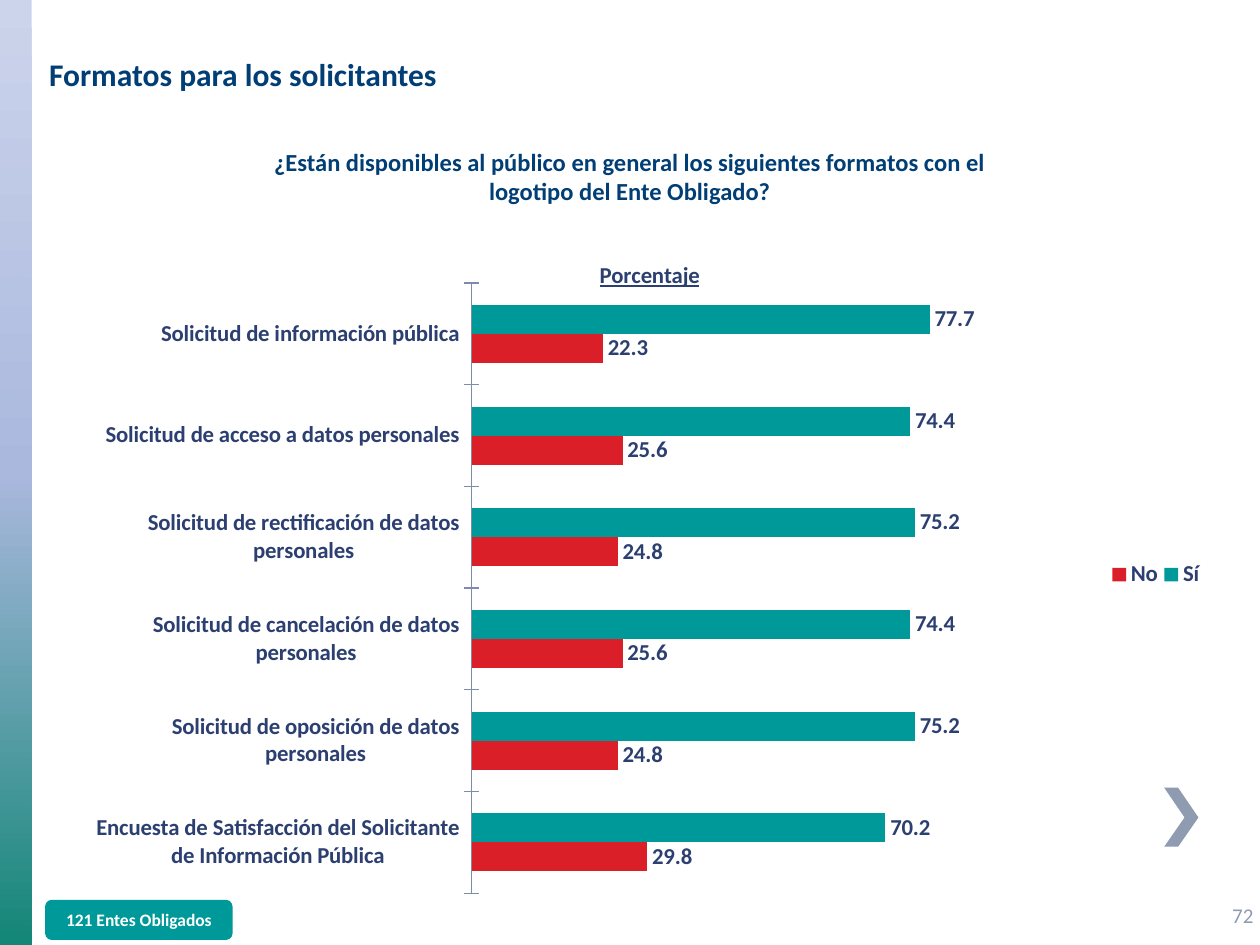
from copy import deepcopy
from lxml import etree
from pptx import Presentation
from pptx.chart.data import CategoryChartData
from pptx.dml.color import RGBColor
from pptx.enum.chart import XL_CHART_TYPE as ChartType, XL_LABEL_POSITION as LabelPosition
from pptx.enum.chart import XL_LEGEND_POSITION as LegendPosition, XL_TICK_MARK as TickMark
from pptx.enum.shapes import MSO_SHAPE as Shape
from pptx.enum.text import MSO_ANCHOR as Anchor, PP_ALIGN as Align
from pptx.oxml.ns import qn
from pptx.util import Cm, Pt


def color(hex_text):
    return RGBColor.from_string(hex_text)


def place(parent, index, settings):
    for old in parent.findall(qn("c:layout")):
        parent.remove(old)
    layout = etree.Element(qn("c:layout"))
    manual = etree.SubElement(layout, qn("c:manualLayout"))
    for tag, value in settings.items():
        etree.SubElement(manual, qn(f"c:{tag}")).set("val", str(value))
    parent.insert(index, layout)


deck = Presentation()
deck.slide_width, deck.slide_height = Cm(25.4), Cm(19.05)
page = deck.slides.add_slide(deck.slide_layouts[6])

strip = page.shapes.add_shape(Shape.RECTANGLE, 0, 0, Cm(0.64), Cm(19.05))
strip.shadow.inherit = False
strip.line.fill.background()
strip.fill.gradient()
strip.fill.gradient_angle = 270
stop_list = strip.fill._fill._gradFill.find(qn("a:gsLst"))
stop_list.append(deepcopy(stop_list[-1]))
for stop, position, shade in zip(strip.fill.gradient_stops, (0, 0.5, 1), ("CCD4EB", "AAB8DE", "138677")):
    stop.position = position
    stop.color.rgb = color(shade)

outline = [(23.75, 15.88), (23.47, 15.88), (23.88, 16.48), (23.47, 17.07), (23.75, 17.07), (24.16, 16.48)]
corners = [(Cm(x), Cm(y)) for x, y in outline]
builder = page.shapes.build_freeform(*corners[0])
builder.add_line_segments(corners[1:], close=True)
chevron = builder.convert_to_shape()
chevron.shadow.inherit = False
chevron.fill.solid()
chevron.fill.fore_color.rgb = color("8E9BB0")
chevron.line.fill.background()

data = CategoryChartData(number_format="0.0")
data.categories = [
    "Solicitud de información pública",
    "Solicitud de acceso a datos personales",
    "Solicitud de rectificación de datos personales",
    "Solicitud de cancelación de datos personales",
    "Solicitud de oposición de datos personales",
    "Encuesta de Satisfacción del Solicitante de Información Pública",
]
data.add_series("Sí", (77.7, 74.4, 75.2, 74.4, 75.2, 70.2))
data.add_series("No", (22.3, 25.6, 24.8, 25.6, 24.8, 29.8))
chart = page.shapes.add_chart(
    ChartType.BAR_CLUSTERED, Cm(1.88), Cm(4.75), Cm(22.43), Cm(13.67), data
).chart
chart.font.name = "Calibri"
chart.font.size = Pt(13)
chart.font.bold = True
chart.font.color.rgb = color("2C3F71")

chart.has_title = True
chart.chart_title.include_in_layout = False
span = chart.chart_title.text_frame.paragraphs[0].add_run()
span.text = "Porcentaje"
span.font.name = "Calibri"
span.font.size = Pt(13)
span.font.bold = True
span.font.underline = True
span.font.color.rgb = color("2C3F71")

categories = chart.category_axis
categories.reverse_order = True
categories.major_tick_mark = TickMark.CROSS
categories.minor_tick_mark = TickMark.NONE
categories.has_major_gridlines = False
categories.format.line.color.rgb = color("7F8BAA")
categories.format.line.width = Pt(0.75)
values = chart.value_axis
values.minimum_scale, values.maximum_scale = 0, 100
values.has_major_gridlines = False
values.visible = False

plot = chart.plots[0]
plot.gap_width = 150
plot.overlap = 0
plot.vary_by_categories = False
for series, shade in zip(plot.series, ("009999", "DA1F28")):
    series.format.fill.solid()
    series.format.fill.fore_color.rgb = color(shade)
    labels = series.data_labels
    labels.show_value = True
    labels.number_format = "0.0"
    labels.number_format_is_linked = False
    labels.position = LabelPosition.OUTSIDE_END

chart.has_legend = True
chart.legend.position = LegendPosition.RIGHT
chart.legend.include_in_layout = False
edges = {"xMode": "edge", "yMode": "edge"}
plot_area = chart._chartSpace.chart.plotArea
place(plot_area, 0, {"layoutTarget": "inner", **edges, "x": 0.34, "y": 0.07, "w": 0.53, "h": 0.9})
place(chart.legend._element, 1, {**edges, "x": 0.91, "y": 0.47, "w": 0.09, "h": 0.06})

badge = page.shapes.add_shape(Shape.ROUNDED_RECTANGLE, Cm(0.91), Cm(18.14), Cm(3.78), Cm(0.81))
badge.shadow.inherit = False
badge.fill.solid()
badge.fill.fore_color.rgb = color("009999")
badge.line.fill.background()

question = "¿Están disponibles al público en general los siguientes formatos con el logotipo del Ente Obligado?"
question_box = page.shapes.add_textbox(Cm(4.72), Cm(2.84), Cm(15.95), Cm(1.45))
title_box = page.shapes.add_textbox(Cm(0.74), Cm(0.3), Cm(23.6), Cm(2.39))
number_box = page.shapes.add_textbox(Cm(24.59), Cm(17.93), Cm(1.07), Cm(1.02))
for box, text, size, shade, bold, align, anchor in (
    (question_box, question, 14, "003E75", True, Align.CENTER, Anchor.TOP),
    (title_box, "Formatos para los solicitantes", 18, "003E75", True, Align.LEFT, Anchor.MIDDLE),
    (number_box, "72", 12, "8E9BB0", False, Align.LEFT, Anchor.MIDDLE),
    (badge, "121 Entes Obligados", 10, "FFFFFF", True, Align.CENTER, Anchor.MIDDLE),
):
    box.text_frame.word_wrap = True
    box.text_frame.vertical_anchor = anchor
    para = box.text_frame.paragraphs[0]
    para.alignment = align
    span = para.add_run()
    span.text = text
    span.font.name = "Calibri"
    span.font.size = Pt(size)
    span.font.bold = bold
    span.font.color.rgb = color(shade)

deck.save("out.pptx")
